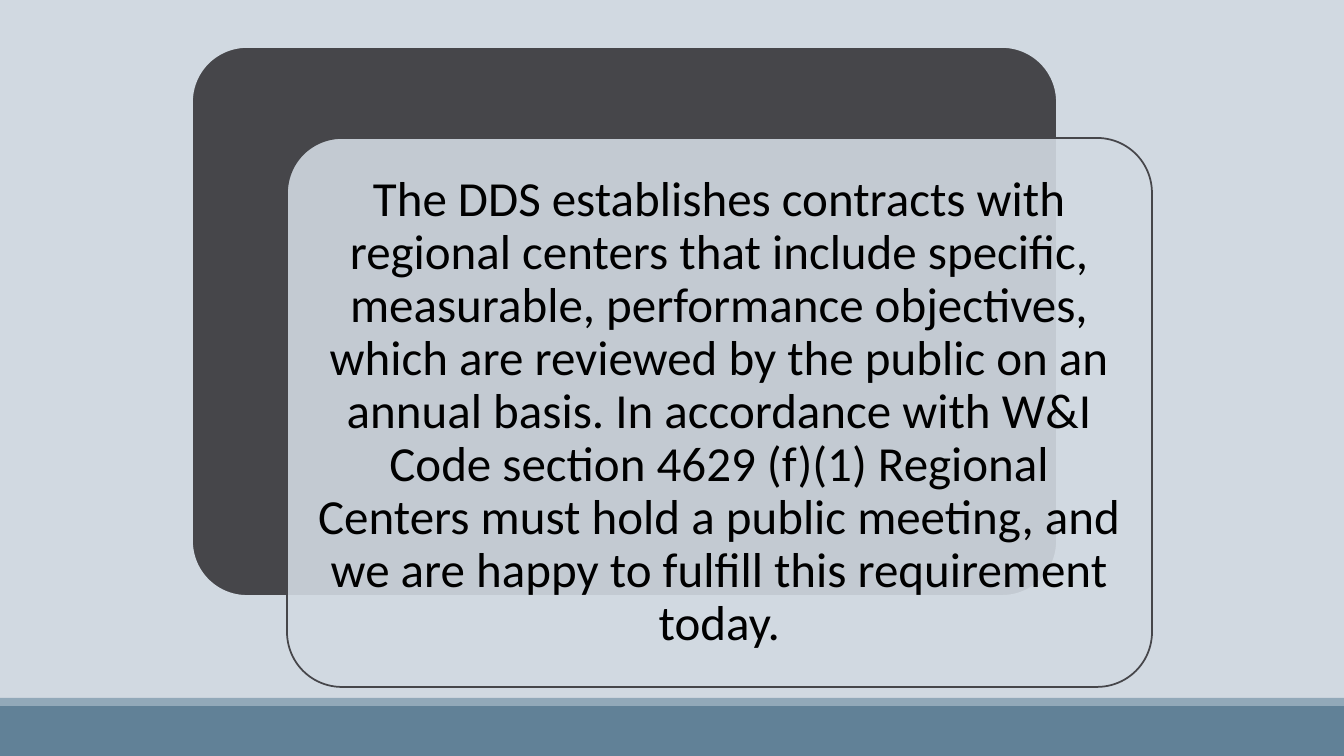
from lxml import etree
from pptx import Presentation
from pptx.dml.color import RGBColor
from pptx.enum.shapes import MSO_SHAPE
from pptx.enum.text import MSO_ANCHOR, PP_ALIGN
from pptx.oxml.ns import qn
from pptx.util import Pt

EMU_PER_PX = 914400 / 100.8
PAGE_WIDTH, PAGE_HEIGHT = 1344, 756

MIST = RGBColor(0xD1, 0xD9, 0xE1)
STEEL = RGBColor(0x61, 0x81, 0x97)
LIGHT_STEEL = RGBColor(0x92, 0xA9, 0xB9)
CHARCOAL = RGBColor(0x46, 0x46, 0x4A)
BLACK = RGBColor(0, 0, 0)

CARD_LEFT, CARD_TOP, CARD_WIDTH, CARD_HEIGHT = 192, 47, 865, 549
SHIFT_X, SHIFT_Y = 95, 91
TEXT_MARGIN = 16
MESSAGE = (
    "The DDS establishes contracts with regional centers that include specific, "
    "measurable, performance objectives, which are reviewed by the public on an "
    "annual basis. In accordance with W&I Code section 4629 (f)(1) Regional "
    "Centers must hold a public meeting, and we are happy to fulfill this "
    "requirement today."
)


def px(length):
    return round(length * EMU_PER_PX)


def apply_format(target, values):
    for name, value in values.items():
        setattr(target, name, value)


def add_block(page, kind, bounds, color):
    block = page.shapes.add_shape(kind, *map(px, bounds))
    block.shadow.inherit = False
    block.fill.solid()
    block.fill.fore_color.rgb = color
    block.line.fill.background()
    return block


def add_card(page, bounds, fill, outline, opacity=100):
    card = add_block(page, MSO_SHAPE.ROUNDED_RECTANGLE, bounds, fill)
    card.adjustments[0] = 0.1
    card.line.color.rgb = outline
    card.line.width = Pt(1.25)
    if opacity < 100:
        color = card.fill._xPr.find(qn("a:solidFill"))[0]
        etree.SubElement(color, qn("a:alpha"), val=str(opacity * 1000))


def add_message(page, bounds, text):
    box = page.shapes.add_textbox(*map(px, bounds))
    frame = box.text_frame
    sides = ("left", "top", "right", "bottom")
    apply_format(frame, {f"margin_{side}": px(15) for side in sides})
    apply_format(frame, {"word_wrap": True, "vertical_anchor": MSO_ANCHOR.MIDDLE})
    para = frame.paragraphs[0]
    apply_format(para, {"alignment": PP_ALIGN.CENTER, "line_spacing": 0.9})
    span = para.add_run()
    span.text = text
    apply_format(span.font, {"name": "Calibri", "size": Pt(35)})
    span.font.color.rgb = BLACK


def main():
    deck = Presentation()
    apply_format(deck, {"slide_width": px(PAGE_WIDTH), "slide_height": px(PAGE_HEIGHT)})
    page = deck.slides.add_slide(deck.slide_layouts[6])
    page.background.fill.solid()
    page.background.fill.fore_color.rgb = MIST

    # Footer bands
    for top, height, color in ((706, 50, STEEL), (698, 8, LIGHT_STEEL)):
        add_block(page, MSO_SHAPE.RECTANGLE, (0, top, PAGE_WIDTH, height), color)

    # Overlapping cards
    add_card(page, (CARD_LEFT, CARD_TOP, CARD_WIDTH, CARD_HEIGHT), CHARCOAL, MIST)
    left, top = CARD_LEFT + SHIFT_X, CARD_TOP + SHIFT_Y
    add_card(page, (left, top, CARD_WIDTH, CARD_HEIGHT), MIST, CHARCOAL, opacity=90)

    # Message inside the front card
    add_message(
        page,
        (left + TEXT_MARGIN, top + TEXT_MARGIN,
         CARD_WIDTH - 2 * TEXT_MARGIN, CARD_HEIGHT - 2 * TEXT_MARGIN),
        MESSAGE,
    )
    deck.save("out.pptx")


if __name__ == "__main__":
    main()
